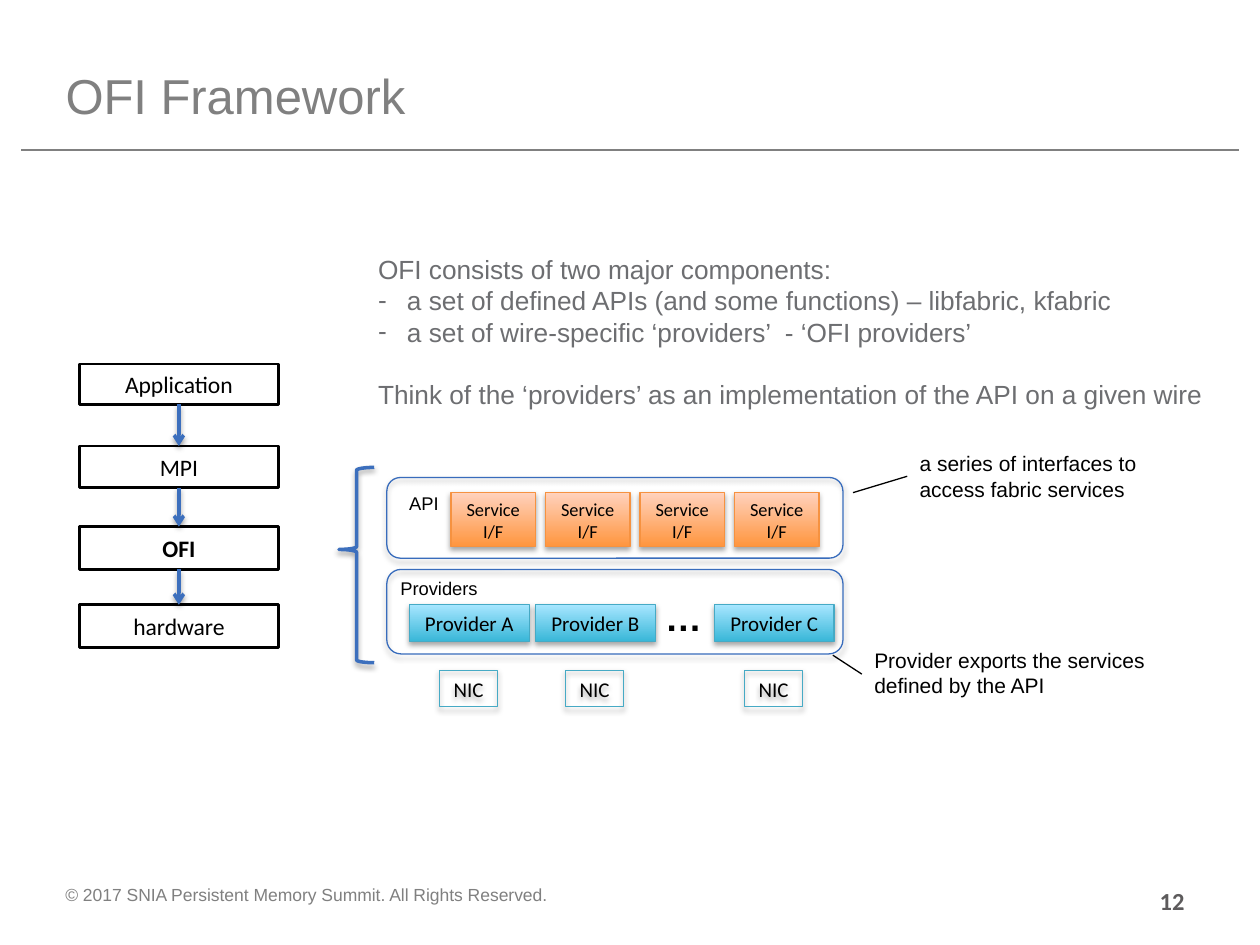
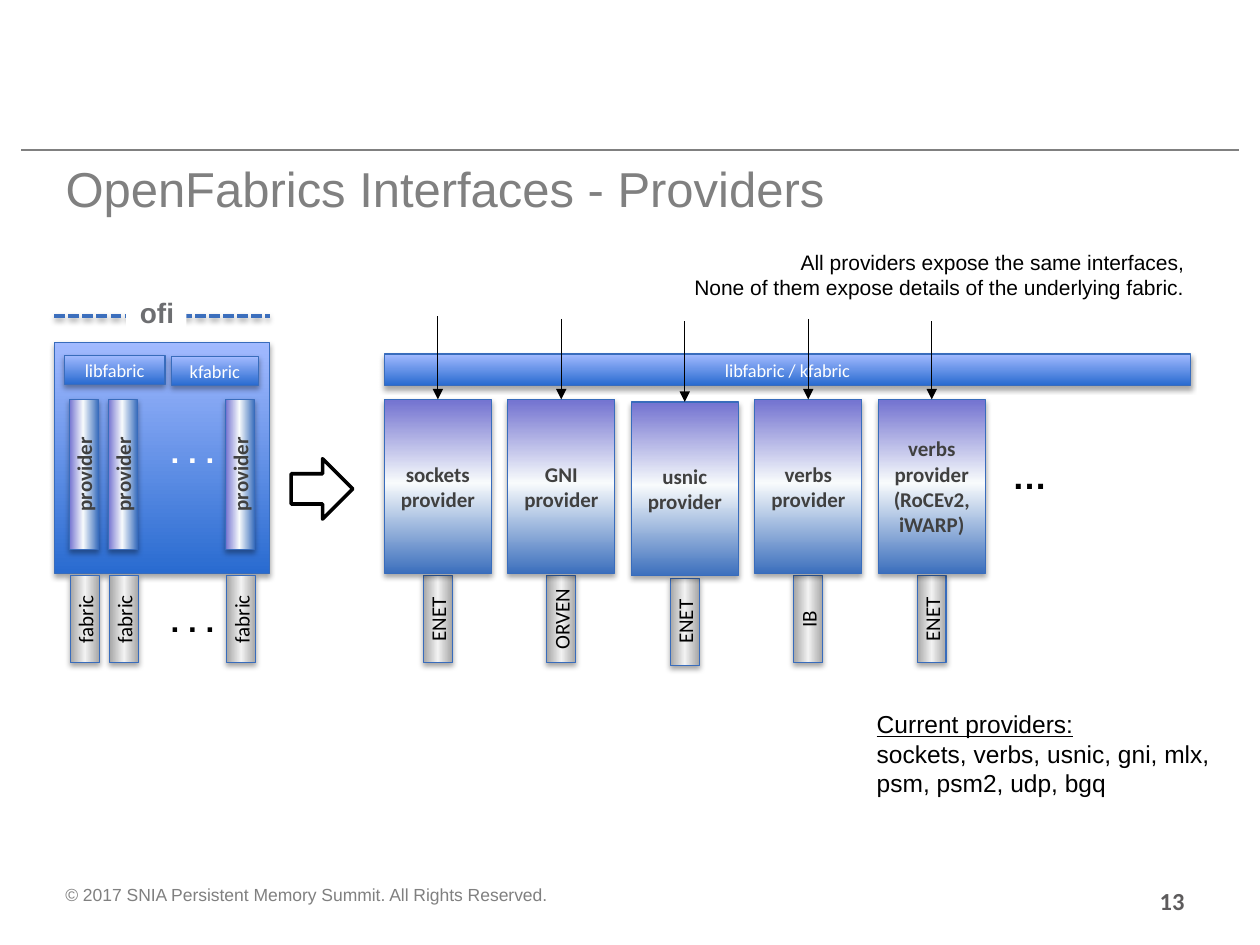
from dataclasses import dataclass

from lxml import etree
from pptx import Presentation
from pptx.dml.color import RGBColor
from pptx.enum import dml, shapes, text
from pptx.oxml import ns
from pptx.util import Inches, Pt

HUES = {
    "black": "000000", "white": "FFFFFF", "grey": "808080", "body": "6D6E71",
    "page": "5D5B5C", "dark": "404040", "edge": "386CBC", "blue": "3C6FBD",
    "amber": "F69240", "teal": "46AAC5",
}
# Gradient stops run from the bottom of a shape to its top.
GRADS = {
    "amber": [(0, "FF953E"), (100, "FFD2BD")],
    "teal": [(0, "39B7D8"), (100, "A7E6FF")],
    "blue": [(0, "296BD0"), (100, "A2BAFF")],
    "steel": [(0, "3C6FBD"), (52, "F8FBFC"), (99, "7575D1")],
    "metal": [(0, "A6A6A6"), (50, "F2F2F2"), (100, "A6A6A6")],
}
LEFT, MID, RIGHT = text.PP_ALIGN.LEFT, text.PP_ALIGN.CENTER, text.PP_ALIGN.RIGHT
KINDS = shapes.MSO_SHAPE
TOP, BOTTOM = 0, 2


@dataclass
class Type:
    size: float
    hue: str = "black"
    face: str = "Arial"
    bold: bool = False
    align: object = LEFT


@dataclass
class Look:
    """Fill, outline and label of a family of shapes."""
    type: Type
    line: str = "edge"
    width: float = 0.75
    grad: str = ""
    fill: str = ""
    shade: bool = True


def label(size, hue="black", bold=False):
    return Type(size, hue, "Calibri", bold, MID)


STEP = Look(label(13.5), "black", 1.5, shade=False)
CORE = Look(label(13.5, bold=True), "black", 1.5, shade=False)
SERVICE = Look(label(10.5), "amber", grad="amber")
VENDOR = Look(label(12), "teal", grad="teal")
NIC = Look(label(12), "teal")
PANEL = Look(label(12))
BRACE = Look(label(12), "blue", 2)
API = Look(label(10.5, "white"), grad="blue")
PROVIDER = Look(label(12, "dark", True), grad="steel")
FABRIC = Look(label(12), grad="metal")
ARROW = Look(label(12), "black", 2, fill="white", shade=False)


def rgb(hue):
    return RGBColor.from_string(HUES[hue])


def add(root, tag, **attrs):
    return etree.SubElement(root, ns.qn(tag), {k: str(v) for k, v in attrs.items()})


def effect(props, shade: bool, alpha=35, dist=1.8):
    """Write the effect list: a soft drop shadow, or none."""
    for old in props.findall(ns.qn("a:effectLst")):
        props.remove(old)
    root = add(props, "a:effectLst")
    if shade:
        drop = add(root, "a:outerShdw", blurRad=Pt(3.1), dist=Pt(dist),
                   dir=90 * 60000, rotWithShape=0)
        tint = add(drop, "a:srgbClr", val=HUES["black"])
        add(tint, "a:alpha", val=alpha * 1000)


def blend(shape, stops):
    shape.fill.gradient()
    grad = shape.element.spPr.find(ns.qn("a:gradFill"))
    grad.set("rotWithShape", "1")
    for kid in list(grad):
        grad.remove(kid)
    row = add(grad, "a:gsLst")
    for pos, hue in stops:
        add(add(row, "a:gs", pos=pos * 1000), "a:srgbClr", val=hue)
    add(grad, "a:lin", ang=270 * 60000, scaled=0)


def style(para, kind: Type):
    para.alignment = kind.align
    font = para.font
    font.size, font.name, font.bold = Pt(kind.size), kind.face, kind.bold
    font.color.rgb = rgb(kind.hue)


def write(frame, words: str, kind: Type):
    frame.text = words
    for para in frame.paragraphs:
        style(para, kind)


def place(shape, left, top, width, height):
    shape.left, shape.top = Inches(left), Inches(top)
    shape.width, shape.height = Inches(width), Inches(height)


def box(slide, at, look: Look, words="", kind=KINDS.RECTANGLE, turn=0):
    shape = slide.shapes.add_shape(kind, *map(Inches, at))
    shape.rotation = turn
    if look.grad:
        blend(shape, GRADS[look.grad])
    elif look.fill:
        shape.fill.solid()
        shape.fill.fore_color.rgb = rgb(look.fill)
    else:
        shape.fill.background()
    shape.line.color.rgb = rgb(look.line)
    shape.line.width = Pt(look.width)
    effect(shape.element.spPr, look.shade)
    if words:
        shape.text_frame.vertical_anchor = text.MSO_ANCHOR.MIDDLE
        write(shape.text_frame, words, look.type)
    return shape


def note(slide, at, words: str, kind: Type, wrap=False, grow=True):
    area = slide.shapes.add_textbox(*map(Inches, at))
    frame = area.text_frame
    frame.word_wrap = wrap
    if grow:
        frame.auto_size = text.MSO_AUTO_SIZE.SHAPE_TO_FIT_TEXT
    write(frame, words, kind)
    return area


def line(slide, start, end, hue="black", width=0.75, head="", shade=False):
    link = slide.shapes.add_connector(
        shapes.MSO_CONNECTOR.STRAIGHT, *map(Inches, (*start, *end)))
    link.line.color.rgb = rgb(hue)
    link.line.width = Pt(width)
    if head:
        add(link.line._get_or_add_ln(), "a:tailEnd", type=head)
    effect(link.element.spPr, shade, 38, 1.6)
    return link


def start(deck, layout: int, name: str, at, page: int):
    """Add a slide with title, rule, footer and page number."""
    slide = deck.slides.add_slide(deck.slide_layouts[layout])
    title = slide.shapes.title
    place(title, *at)
    title.text_frame.vertical_anchor = text.MSO_ANCHOR.MIDDLE
    write(title.text_frame, name, Type(28, "grey"))
    line(slide, (0.17, 1.19), (9.83, 1.19), "grey")
    note(slide, (0.42, 6.97, 8.08, 0.39),
         "© 2017 SNIA Persistent Memory Summit. All Rights Reserved.",
         Type(10, "grey"), True, False)
    note(slide, (7.17, 6.98, 2.33, 0.52), str(page),
         Type(14, "page", "Calibri", True, RIGHT), True, False)
    return slide


def points(slide):
    body = slide.placeholders[1]
    place(body, 2.9, 1.96, 7, 1.36)
    frame = body.text_frame
    frame.auto_size = text.MSO_AUTO_SIZE.NONE
    rows = [
        ("OFI consists of two major components:", False),
        ("a set of defined APIs (and some functions) – libfabric, kfabric", True),
        ("a set of wire-specific ‘providers’  - ‘OFI providers’", True),
        ("Think of the ‘providers’ as an implementation of the API on a given wire",
         False),
    ]
    frame.text = "\n".join(words for words, _ in rows)
    for para, (_, dash) in zip(frame.paragraphs, rows):
        para.space_before = Pt(0)
        props = para._p.get_or_add_pPr()
        gap = Inches(0.23) if dash else 0
        props.set("marL", str(gap))
        props.set("indent", str(-gap))
        if dash:
            add(props, "a:buFont", typeface="Arial")
            add(props, "a:buChar", char="-")
        else:
            add(props, "a:buNone")
        style(para, Type(15, "body"))
    frame.paragraphs[-1].space_before = Pt(17.25)


def framework(deck):
    slide = start(deck, 1, "OFI Framework", (0.42, 0.25, 5.83, 1), 12)
    points(slide)

    stack = [("Application", 2.89, 0.32, STEP), ("MPI", 3.54, 0.33, STEP),
             ("OFI", 4.18, 0.34, CORE), ("hardware", 4.8, 0.34, STEP)]
    steps = [box(slide, (0.63, top, 1.58, tall), look, words)
             for words, top, tall, look in stack]
    for above, below in zip(steps, steps[1:]):
        link = line(slide, (1.42, 3), (1.42, 4), "blue", 2, "arrow", True)
        link.begin_connect(above, BOTTOM)
        link.end_connect(below, TOP)

    for i in range(4):
        box(slide, (3.58 + 0.75 * i, 3.91, 0.67, 0.43), SERVICE, "Service I/F")
    for left, mark in zip((3.25, 4.25, 5.67), "ABC"):
        box(slide, (left, 4.8, 0.95, 0.29), VENDOR, f"Provider {mark}")
        box(slide, (left + 0.24, 5.32, 0.46, 0.29), NIC, "NIC")
    note(slide, (5.17, 4.67, 0.5, 0.45), "…", Type(21, bold=True, align=RIGHT))

    for top, tall in ((4.52, 0.67), (3.79, 0.64)):
        box(slide, (3.07, top, 3.62, tall), PANEL, kind=KINDS.ROUNDED_RECTANGLE)
    small = Type(10.5, align=RIGHT)
    note(slide, (3.14, 3.86, 0.44, 0.28), "API", small)
    note(slide, (3.06, 4.53, 0.83, 0.28), "Providers", small)
    brace = box(slide, (2.69, 3.71, 0.28, 1.55), BRACE, kind=KINDS.LEFT_BRACE)
    brace.adjustments[0], brace.adjustments[1] = 0.08, 0.42

    note(slide, (7.2, 3.53, 1.99, 0.5),
         "a series of interfaces to access fabric services", Type(12), True)
    line(slide, (7.2, 3.78), (6.77, 3.91))
    note(slide, (6.84, 5.09, 2.58, 0.5),
         "Provider exports the services defined by the API", Type(12), True)
    line(slide, (6.84, 5.35), (6.61, 5.2))


def stack(slide):
    """Draw the compact OFI block with its fabrics."""
    box(slide, (0.43, 2.72, 1.71, 1.83), API)
    box(slide, (0.51, 2.82, 0.8, 0.23), API, "libfabric")
    box(slide, (1.36, 2.83, 0.69, 0.23), API, "kfabric")
    rule = line(slide, (0.43, 2.51), (2.14, 2.51), "blue", 2, shade=True)
    rule.line.dash_style = dml.MSO_LINE.SQUARE_DOT
    name = note(slide, (1, 2.3, 0.48, 0.37), "ofi",
                Type(16, "body", bold=True, align=RIGHT))
    name.fill.solid()
    name.fill.fore_color.rgb = rgb("white")
    for left in (0.07, 0.38, 1.31):
        box(slide, (left, 3.65, 1.19, 0.23), PROVIDER, "provider", turn=270)
        box(slide, (left + 0.26, 4.8, 0.69, 0.23), FABRIC, "fabric", turn=270)
    for top, hue in ((3.38, "white"), (4.72, "black")):
        note(slide, (1.25, top, 0.55, 0.4), ". . .",
             Type(18, hue, bold=True, align=RIGHT))


def providers(deck):
    slide = start(deck, 5, "OpenFabrics Interfaces - Providers",
                  (0.42, 1.12, 7.25, 0.75), 13)
    stack(slide)
    box(slide, (2.31, 3.64, 0.49, 0.48), ARROW, kind=KINDS.RIGHT_ARROW)
    box(slide, (3.05, 2.81, 6.4, 0.25), API, "libfabric / kfabric")

    # Provider, fabric, drop of the column, start of its arrow
    cols = [("sockets provider", "ENET", 0, 2.51),
            ("GNI provider", "ORVEN", 0, 2.53),
            ("usnic provider", "ENET", 0.02, 2.55),
            ("verbs provider", "IB", 0, 2.53),
            ("verbs provider\n(RoCEv2, iWARP)", "ENET", 0, 2.55)]
    for i, (words, wire, drop, top) in enumerate(cols):
        left = 3.05 + 0.98 * i
        box(slide, (left + 0.08, 4.8 + drop, 0.69, 0.23), FABRIC, wire, turn=270)
        block = box(slide, (left, 3.17 + drop, 0.85, 1.38), PROVIDER, words)
        mid = left + 0.425
        link = line(slide, (mid, top), (mid, 3.17), head="triangle")
        link.end_connect(block, TOP)

    note(slide, (7.93, 3.56, 0.48, 0.44), "…", Type(20, bold=True, align=RIGHT))
    note(slide, (5.38, 1.93, 4.12, 0.5),
         "All providers expose the same interfaces,\n"
         "None of them expose details of the underlying fabric.",
         Type(12, align=RIGHT))
    area = note(slide, (6.86, 5.58, 3.12, 0.81),
                "Current providers:\n"
                "sockets, verbs, usnic, gni, mlx, psm, psm2, udp, bgq", Type(14), True)
    area.text_frame.paragraphs[0].font.underline = True


def main():
    deck = Presentation()
    deck.slide_width, deck.slide_height = Inches(10), Inches(7.5)
    framework(deck)
    providers(deck)
    deck.save("out.pptx")


if __name__ == "__main__":
    main()
